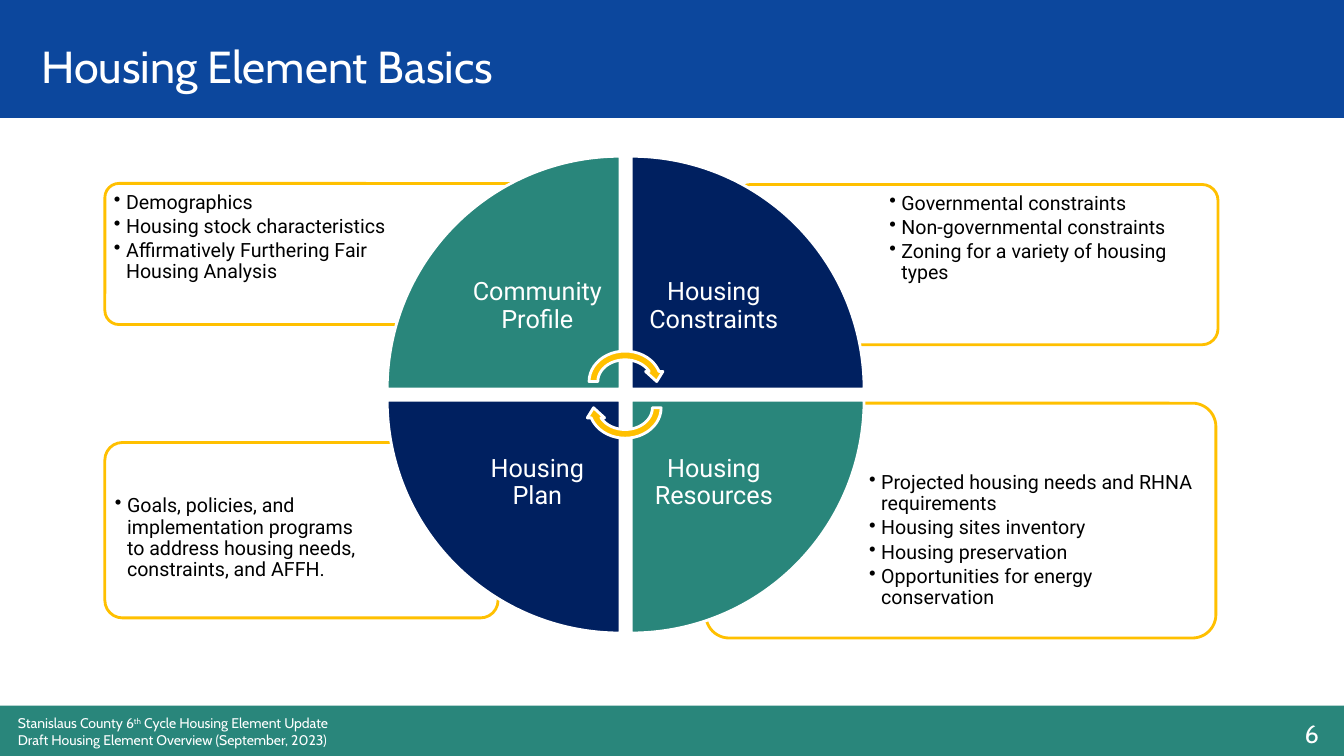
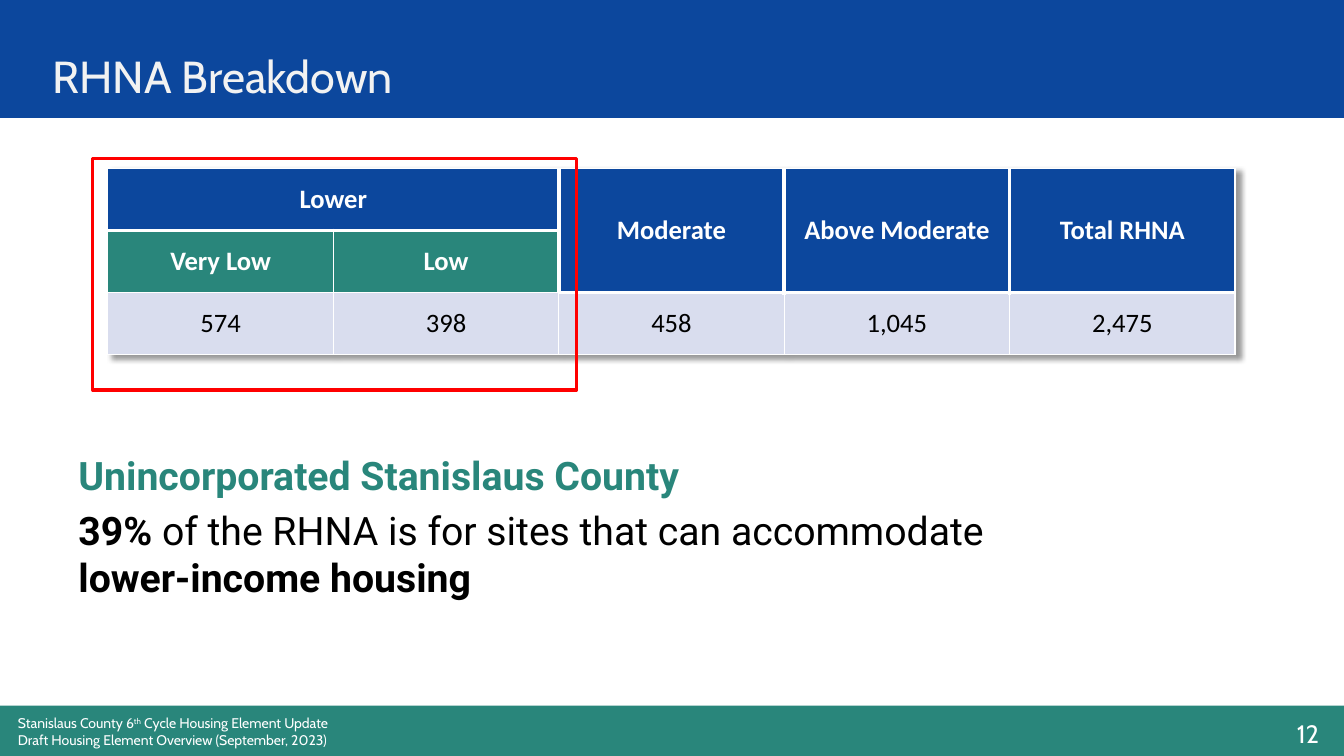
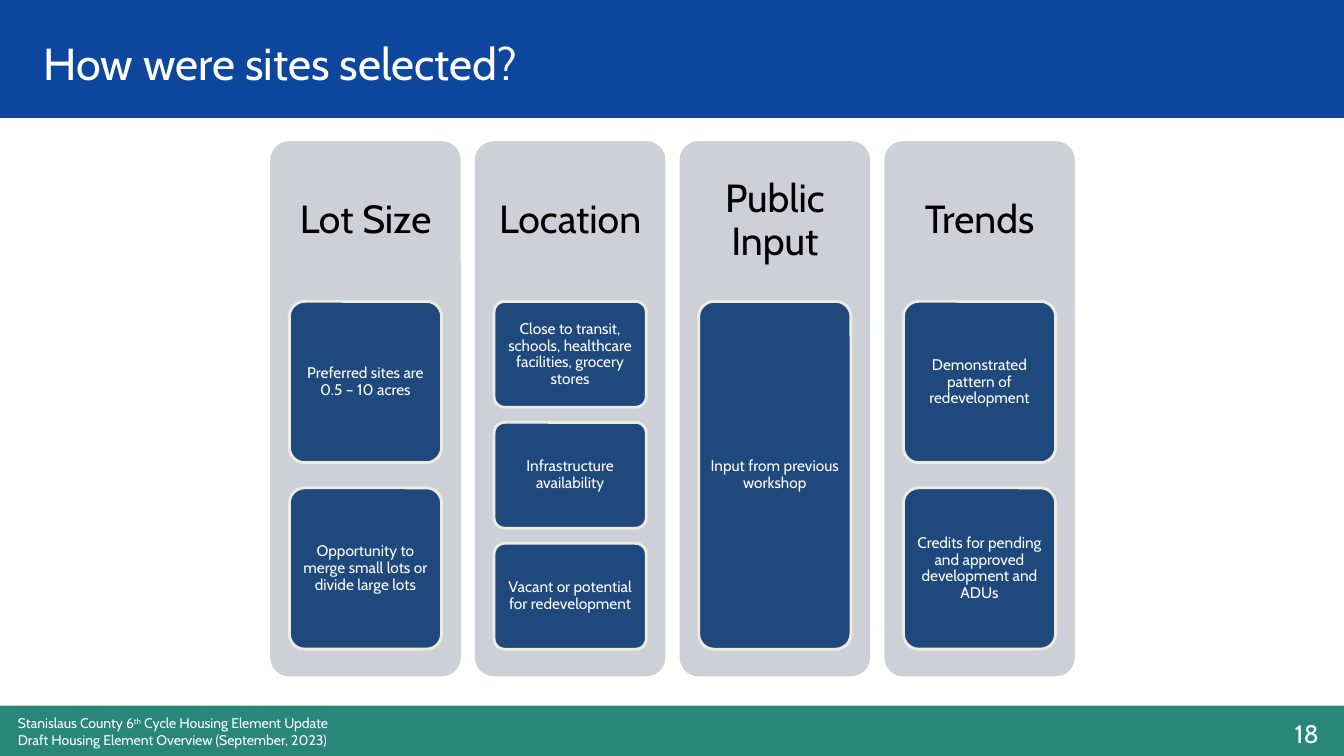
from dataclasses import dataclass

from lxml import etree
from pptx import Presentation, util as u
from pptx.dml.color import RGBColor
from pptx.enum import shapes, text
from pptx.oxml.ns import qn

# Scale: 100 px to the inch
EMU_PER_PX = 9144
SLIDE_W, SLIDE_H = 1333, 750

# Colours
WHITE = RGBColor(0xFF, 0xFF, 0xFF)
OFF_WHITE = RGBColor(0xF2, 0xF2, 0xF2)
BLACK = RGBColor(0x00, 0x00, 0x00)
BLUE = RGBColor(0x0C, 0x47, 0x9D)
TEAL = RGBColor(0x29, 0x86, 0x7B)
NAVY = RGBColor(0x00, 0x20, 0x60)
GOLD = RGBColor(0xFF, 0xC0, 0x00)
RED = RGBColor(0xFF, 0x00, 0x00)
PALE_BLUE = RGBColor(0xD9, 0xDD, 0xEE)
GREY = RGBColor(0xCD, 0xD0, 0xD7)
STEEL = RGBColor(0x1F, 0x49, 0x7D)
CREAM = RGBColor(0xEE, 0xEC, 0xE1)

HEAD_FONT, BODY_FONT, TABLE_FONT = "Cabin", "Roboto", "Calibri"
SHAPE = shapes.MSO_SHAPE
LEFT, CENTER, RIGHT = text.PP_ALIGN.LEFT, text.PP_ALIGN.CENTER, text.PP_ALIGN.RIGHT
TOP, MIDDLE = text.MSO_ANCHOR.TOP, text.MSO_ANCHOR.MIDDLE

Box = tuple[int, int, int, int]


@dataclass(frozen=True)
class Run:
    text: str
    bold: bool | None = None
    color: RGBColor | None = None
    superscript: bool = False


@dataclass(frozen=True)
class Quadrant:
    label: str
    color: RGBColor
    col: int
    row: int
    rotation: int
    panel: Box
    bullet_box: Box
    bullets: list[str]


@dataclass(frozen=True)
class Column:
    heading: str
    cards: list[str]


QUADRANTS = [
    Quadrant("Community Profile", TEAL, 0, 0, 0, (104, 182, 425, 140), (107, 185, 291, 99),
             ["Demographics", "Housing stock characteristics",
              "Affirmatively Furthering Fair Housing Analysis"]),
    Quadrant("Housing Constraints", NAVY, 1, 0, 90, (729, 183, 479, 159), (876, 186, 328, 112),
             ["Governmental constraints", "Non-governmental constraints",
              "Zoning for a variety of housing types"]),
    Quadrant("Housing Resources", TEAL, 1, 1, 180, (700, 400, 506, 233), (856, 463, 344, 165),
             ["Projected housing needs and RHNA requirements", "Housing sites inventory",
              "Housing preservation", "Opportunities for energy conservation"]),
    Quadrant("Housing Plan", NAVY, 0, 1, 270, (104, 439, 390, 174), (108, 486, 265, 123),
             ["Goals, policies, and implementation programs to address housing needs, "
              "constraints, and AFFH."]),
]

RHNA_ROWS = [
    ("Lower", "", "Moderate", "Above Moderate", "Total RHNA"),
    ("Very Low", "Low", "", "", ""),
    ("574", "398", "458", "1,045", "2,475"),
]

COLUMNS = [
    Column("Lot Size", ["Preferred sites are 0.5 – 10 acres",
                        "Opportunity to merge small lots or divide large lots"]),
    Column("Location", ["Close to transit, schools, healthcare facilities, grocery stores",
                        "Infrastructure availability",
                        "Vacant or potential for redevelopment"]),
    Column("Public Input", ["Input from previous workshop"]),
    Column("Trends", ["Demonstrated pattern of redevelopment",
                      "Credits for pending and approved development and ADUs"]),
]


def px(n: float) -> u.Emu:
    return u.Emu(round(n * EMU_PER_PX))


def write_text(tf, paragraphs, *, size: float, font: str = HEAD_FONT,
               color: RGBColor = WHITE, bold: bool = False, align=LEFT,
               line: float | None = None, before: float = 0, after: float = 0,
               bullet: bool = False) -> None:
    """Fill a text frame; a paragraph is a string or a list of runs."""
    if isinstance(paragraphs, str):
        paragraphs = [paragraphs]
    for i, para in enumerate(paragraphs):
        p = tf.add_paragraph() if i else tf.paragraphs[0]
        p.alignment = align
        if line:
            p.line_spacing = line
        p.space_before = u.Pt(before if i else 0)
        p.space_after = u.Pt(after)
        if bullet:
            pPr = p._p.get_or_add_pPr()
            pPr.set("marL", str(px(12)))
            pPr.set("indent", str(px(-12)))
            etree.SubElement(pPr, qn("a:buChar")).set("char", "•")
        for part in [Run(para)] if isinstance(para, str) else para:
            for j, piece in enumerate(part.text.split("\n")):
                if j:
                    p.add_line_break()
                if not piece:
                    continue
                r = p.add_run()
                r.text = piece
                r.font.name = font
                r.font.size = u.Pt(size)
                r.font.bold = bold if part.bold is None else part.bold
                r.font.color.rgb = part.color or color
                if part.superscript:
                    r._r.get_or_add_rPr().set("baseline", "30000")


def set_frame(tf, anchor, insets: tuple[int, int]) -> None:
    tf.word_wrap = True
    tf.vertical_anchor = anchor
    tf.margin_left = tf.margin_right = px(insets[0])
    tf.margin_top = tf.margin_bottom = px(insets[1])


def add_text(slide, box: Box, paragraphs, *, anchor=TOP,
             insets: tuple[int, int] = (10, 5), **fmt) -> None:
    tf = slide.shapes.add_textbox(*map(px, box)).text_frame
    set_frame(tf, anchor, insets)
    write_text(tf, paragraphs, **fmt)


def add_shape(slide, kind, box: Box, *, fill: RGBColor | None = None,
              line: RGBColor | None = None, width: float = 2, rotation: int = 0):
    sp = slide.shapes.add_shape(kind, *map(px, box))
    sp.shadow.inherit = False
    sp.rotation = rotation
    if fill is None:
        sp.fill.background()
    else:
        sp.fill.solid()
        sp.fill.fore_color.rgb = fill
    if line is None:
        sp.line.fill.background()
    else:
        sp.line.color.rgb = line
        sp.line.width = u.Pt(width)
    if kind == SHAPE.ROUNDED_RECTANGLE:
        sp.adjustments[0] = 0.1
    return sp


def add_page(prs, title: str, title_box: Box, number: int, *,
             title_color: RGBColor = WHITE, title_anchor=TOP):
    """Blank slide with the shared bands, footer, number and title."""
    slide = prs.slides.add_slide(prs.slide_layouts[6])
    add_shape(slide, SHAPE.RECTANGLE, (0, -4, SLIDE_W, 121), fill=BLUE)
    add_shape(slide, SHAPE.RECTANGLE, (0, 700, SLIDE_W, 50), fill=TEAL)
    add_text(slide, (8, 704, 775, 45), [[
        Run("Stanislaus County 6"), Run("th", superscript=True),
        Run(" Cycle Housing Element Update\nDraft Housing Element Overview (September, 2023)"),
    ]], size=10)
    add_text(slide, (1007, 708, 311, 50), str(number), size=18, align=RIGHT)
    add_text(slide, title_box, title, size=32, color=title_color, anchor=title_anchor)
    return slide


# Slide: four quadrants around a cycle
def build_basics(prs) -> None:
    slide = add_page(prs, "Housing Element Basics", (31, 33, 1211, 58), 6)
    left, top, wedge, pitch, label = 384, 155, 231, 242, 164

    for q in QUADRANTS:
        add_shape(slide, SHAPE.ROUNDED_RECTANGLE, q.panel, fill=WHITE, line=GOLD)
        add_text(slide, q.bullet_box, q.bullets, size=14, font=BODY_FONT, color=BLACK,
                 line=0.9, after=2.1, bullet=True, insets=(6, 6))
    for q in QUADRANTS:
        x, y = left + q.col * pitch, top + q.row * pitch
        add_shape(slide, SHAPE.PIE_WEDGE, (x, y, wedge, wedge), fill=q.color,
                  line=WHITE, rotation=q.rotation)
        # Labels sit in the corner nearest the centre
        inner_x = x + (1 - q.col) * (wedge - label)
        inner_y = y + (1 - q.row) * (wedge - label)
        add_text(slide, (inner_x, inner_y, label, label), q.label, size=18, font=BODY_FONT,
                 align=CENTER, anchor=MIDDLE, line=0.9, insets=(14, 14))
    for y, rotation in ((344, 0), (370, 180)):
        add_shape(slide, SHAPE.CIRCULAR_ARROW, (580, y, 80, 69), fill=GOLD,
                  line=WHITE, rotation=rotation)


def set_borders(cell, **widths: float) -> None:
    tcPr = cell._tc.get_or_add_tcPr()
    for side in "LRTB":
        ln = etree.SubElement(tcPr, qn(f"a:ln{side}"), w=str(u.Pt(widths.get(side, 1))))
        fill = etree.SubElement(ln, qn("a:solidFill"))
        etree.SubElement(fill, qn("a:srgbClr"), val=str(WHITE))


def add_table_shadow(table) -> None:
    effects = etree.Element(qn("a:effectLst"))
    shadow = etree.SubElement(effects, qn("a:outerShdw"), blurRad="50800", dist="38100",
                              dir="2700000", algn="tl", rotWithShape="0")
    color = etree.SubElement(shadow, qn("a:prstClr"), val="black")
    etree.SubElement(color, qn("a:alpha"), val="40000")
    table._tbl.tblPr.insert(0, effects)


# Slide: allocation table
def build_breakdown(prs) -> None:
    slide = add_page(prs, "RHNA Breakdown", (42, 43, 1184, 58), 12, title_color=OFF_WHITE)
    rows, cols = len(RHNA_ROWS), len(RHNA_ROWS[0])
    table = slide.shapes.add_table(rows, cols, *map(px, (107, 167, 1118, 185))).table
    table.first_row = table.horz_banding = False
    add_table_shadow(table)

    for i, row in enumerate(RHNA_ROWS):
        for j, value in enumerate(row):
            cell = table.cell(i, j)
            is_figure = i == rows - 1
            is_sub_head = i == 1 and j < 2
            if is_figure or is_sub_head:
                set_borders(cell)
            else:
                set_borders(cell, B=3, L=3 if j > 1 else 1, R=3 if 0 < j < cols - 1 or j == 0 else 1)
            cell.fill.solid()
            cell.fill.fore_color.rgb = PALE_BLUE if is_figure else TEAL if is_sub_head else BLUE
            cell.vertical_anchor = MIDDLE
            if value:
                write_text(cell.text_frame, value, size=19, font=TABLE_FONT, align=CENTER,
                           bold=not is_figure, color=BLACK if is_figure else WHITE)
    table.cell(0, 0).merge(table.cell(0, 1))
    for j in range(2, cols):
        table.cell(0, j).merge(table.cell(1, j))

    add_text(slide, (68, 443, 1157, 201), [
        [Run("Unincorporated Stanislaus County", bold=True, color=TEAL)],
        [Run("39% ", bold=True), Run("of the RHNA is for sites that can accommodate\n"),
         Run("lower-income housing", bold=True)],
    ], size=28, font=BODY_FONT, color=BLACK, before=5.6)
    add_shape(slide, SHAPE.RECTANGLE, (92, 157, 480, 230), line=RED, width=2.25)


# Slide: selection criteria in columns of cards
def build_selection(prs) -> None:
    slide = add_page(prs, "How were sites selected?", (33, 16, 1078, 92), 18,
                     title_anchor=MIDDLE)
    left, top, width, pitch = 268, 140, 189, 203
    cards_top, cards_height, card_width, gap_ratio = 299, 345, 151, 0.15

    for i, column in enumerate(COLUMNS):
        x = left + i * pitch
        add_shape(slide, SHAPE.ROUNDED_RECTANGLE, (x, top, width, 531), fill=GREY)
        add_text(slide, (x, top, width, 159), column.heading, size=28, color=BLACK,
                 align=CENTER, anchor=MIDDLE, line=0.9, insets=(12, 12))
        n = len(column.cards)
        height = cards_height / (n + (n - 1) * gap_ratio)
        for k, label in enumerate(column.cards):
            y = round(cards_top + k * height * (1 + gap_ratio))
            sp = add_shape(slide, SHAPE.ROUNDED_RECTANGLE,
                           (x + (width - card_width) // 2, y, card_width, round(height)),
                           fill=STEEL, line=CREAM)
            set_frame(sp.text_frame, MIDDLE, (3, 2))
            write_text(sp.text_frame, label, size=11, align=CENTER, line=0.9)


def main() -> None:
    prs = Presentation()
    prs.slide_width, prs.slide_height = px(SLIDE_W), px(SLIDE_H)
    build_basics(prs)
    build_breakdown(prs)
    build_selection(prs)
    prs.save("out.pptx")


if __name__ == "__main__":
    main()
